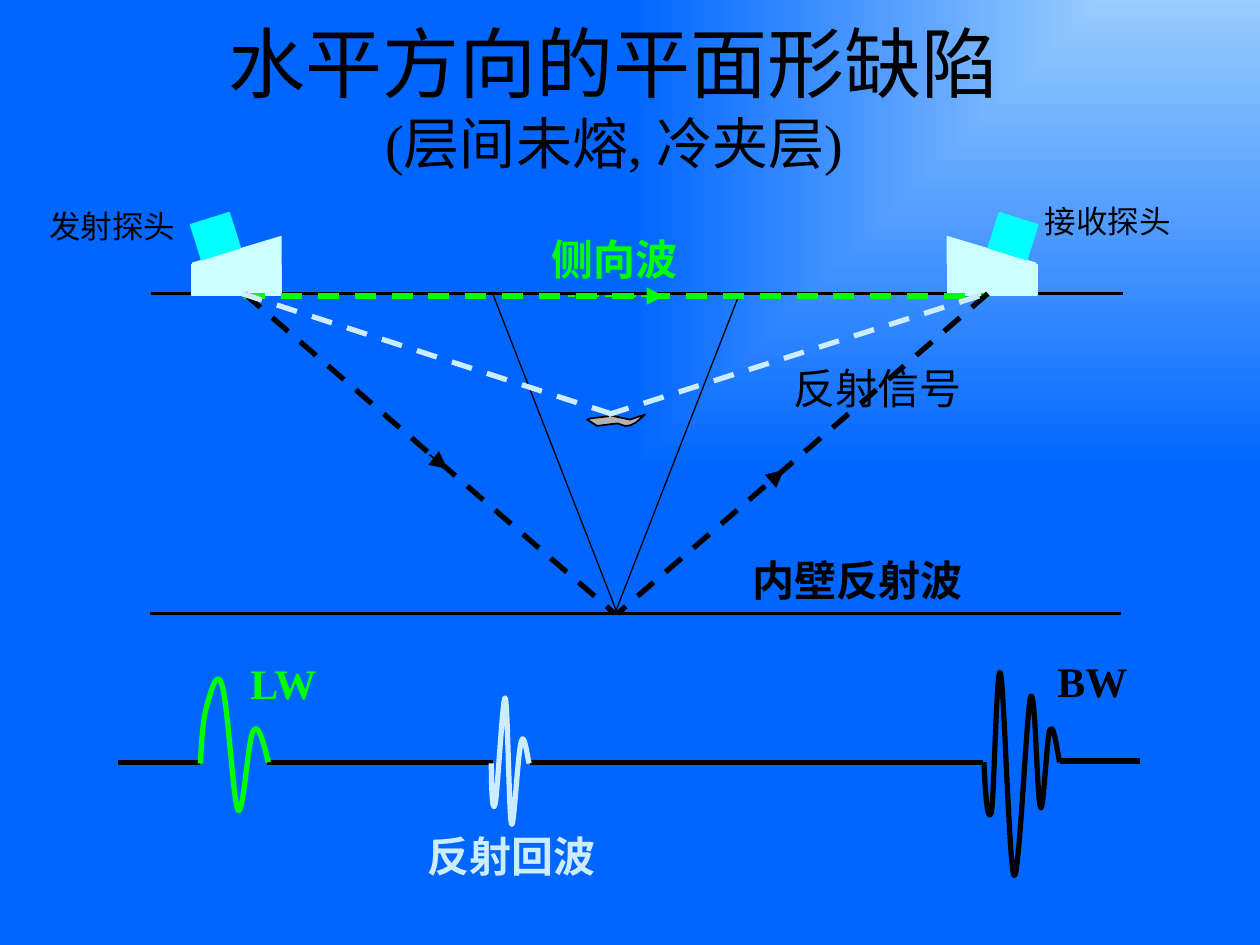
from lxml import etree
from pptx import Presentation
from pptx.dml.color import RGBColor
from pptx.enum.dml import MSO_LINE
from pptx.enum.shapes import MSO_CONNECTOR, MSO_SHAPE
from pptx.enum.text import MSO_ANCHOR, MSO_AUTO_SIZE, PP_ALIGN
from pptx.oxml.ns import qn
from pptx.util import Inches, Pt

STRAIGHT = MSO_CONNECTOR.STRAIGHT
DASH = MSO_LINE.DASH
RECTANGLE, RIGHT_TRIANGLE = MSO_SHAPE.RECTANGLE, MSO_SHAPE.RIGHT_TRIANGLE
MIDDLE, CENTER = MSO_ANCHOR.MIDDLE, PP_ALIGN.CENTER
NO_AUTOFIT, FIT_SHAPE = MSO_AUTO_SIZE.NONE, MSO_AUTO_SIZE.SHAPE_TO_FIT_TEXT

BLACK = RGBColor(0x00, 0x00, 0x00)
GREEN = RGBColor(0x00, 0xFF, 0x00)
CYAN = RGBColor(0x00, 0xFF, 0xFF)
PALE_CYAN = RGBColor(0xCC, 0xFF, 0xFF)
PALE_BLUE = RGBColor(0xCC, 0xEC, 0xFF)
GRAY = RGBColor(0xB2, 0xB2, 0xB2)
SKY = RGBColor(0x99, 0xCC, 0xFF)
BLUE = RGBColor(0x00, 0x66, 0xFF)
FONT = "Times New Roman"

LATERAL_PULSE = [(0, 0.01), (0.01, -0.16), (0.02, -0.34), (0.05, -0.44),
                 (0.08, -0.55), (0.13, -0.75), (0.17, -0.62),
                 (0.22, -0.48), (0.26, 0.32), (0.3, 0.38),
                 (0.34, 0.44), (0.38, -0.19), (0.42, -0.25),
                 (0.46, -0.32), (0.5, -0.16), (0.54, 0)]
FLAW_PULSE = [(0, 0.01), (0, 0.22), (0.01, 0.42), (0.03, 0.33),
              (0.05, 0.24), (0.09, -0.53), (0.11, -0.51),
              (0.13, -0.48), (0.14, 0.43), (0.16, 0.49),
              (0.18, 0.54), (0.21, -0.1), (0.24, -0.17),
              (0.26, -0.25), (0.29, -0.02), (0.3, 0.01)]
BACKWALL_PULSE = [(0, 0), (0.01, 0.25), (0.03, 0.51), (0.06, 0.39),
                  (0.08, 0.27), (0.1, -0.79), (0.13, -0.71),
                  (0.16, -0.63), (0.2, 0.87), (0.24, 0.9),
                  (0.28, 0.93), (0.34, -0.43), (0.37, -0.52),
                  (0.41, -0.61), (0.42, 0.32), (0.45, 0.36),
                  (0.47, 0.41), (0.5, -0.19), (0.52, -0.25),
                  (0.55, -0.32), (0.57, -0.16), (0.6, 0)]
FLAW_OUTLINE = [(0.03, 0.03), (0.2, 0.01), (0.34, 0.04), (0.46, 0),
                (0.39, 0.06), (0.37, 0.09), (0.3, 0.09),
                (0.24, 0.07), (0.08, 0.09), (0, 0.04)]


def paint_background(slide):
    fill = slide.background.fill
    fill.gradient()
    for stop, color in zip(fill.gradient_stops, (SKY, BLUE)):
        stop.color.rgb = color
    gradient = slide.background._cSld.find(".//" + qn("a:gradFill"))
    linear = gradient.find(qn("a:lin"))
    focus = etree.Element(qn("a:path"), {"path": "rect"})
    etree.SubElement(focus, qn("a:fillToRect"), {"l": "100000", "b": "100000"})
    gradient.replace(linear, focus)


def add_line(shapes, start, end, color, width, dashed=False, arrow=False):
    connector = shapes.add_connector(
        STRAIGHT, *(Inches(value) for value in (*start, *end)))
    line = connector.line
    line.color.rgb = color
    line.width = Pt(width)
    if dashed:
        line.dash_style = DASH
    if arrow:
        etree.SubElement(line._get_or_add_ln(), qn("a:tailEnd"),
                         {"type": "triangle", "w": "lg", "len": "lg"})
    etree.SubElement(connector._element.spPr, qn("a:effectLst"))


def add_label(shapes, box, text, color=BLACK, size=24, bold=False):
    shape = shapes.add_textbox(*(Inches(value) for value in box))
    frame = shape.text_frame
    frame.word_wrap = False
    frame.auto_size = FIT_SHAPE
    frame.vertical_anchor = MIDDLE
    paragraph = frame.paragraphs[0]
    paragraph.text = text
    paragraph.alignment = CENTER
    font = paragraph.font
    font.name, font.size, font.bold = FONT, Pt(size), bold
    font.color.rgb = color


def add_block(shapes, kind, box, color):
    shape = shapes.add_shape(kind, *(Inches(value) for value in box))
    shape.shadow.inherit = False
    shape.fill.solid()
    shape.fill.fore_color.rgb = color
    shape.line.color.rgb = color
    shape.line.width = Pt(1)
    return shape


def add_outline(shapes, left, top, points, curve_starts, color, width, closed=False):
    places = [(Inches(left + x), Inches(top + y)) for x, y in points]
    builder = shapes.build_freeform(*places[0])
    builder.add_line_segments(places[1:], close=closed)
    shape = builder.convert_to_shape()
    segments = list(shape._element.iter(qn("a:lnTo")))
    for start in curve_starts:
        curve = etree.Element(qn("a:cubicBezTo"))
        segments[start].addprevious(curve)
        for segment in segments[start:start + 3]:
            curve.append(segment[0])
            segment.getparent().remove(segment)
    shape.shadow.inherit = False
    shape.fill.background()
    shape.line.color.rgb = color
    shape.line.width = Pt(width)
    return shape


def add_pulse(shapes, left, baseline, points, color):
    add_outline(shapes, left, baseline, points, range(0, len(points) - 1, 3), color, 3)


def add_title(slide, box):
    title = slide.shapes.title
    title.left, title.top, title.width, title.height = (Inches(value) for value in box)
    frame = title.text_frame
    frame.auto_size = NO_AUTOFIT
    frame.vertical_anchor = MIDDLE
    paragraph = frame.paragraphs[0]
    paragraph.alignment = CENTER
    paragraph.font.name = FONT
    paragraph.font.color.rgb = BLACK
    heading = paragraph.add_run()
    heading.text = "水平方向的平面形缺陷"
    heading.font.size = Pt(44)
    paragraph.add_line_break()
    subtitle = paragraph.add_run()
    subtitle.text = "(层间未熔, 冷夹层)"
    subtitle.font.size = Pt(32)


def add_probe(slide, left, top, width, mirrored=False):
    def place(offset, down, part_width, height):
        x = width - offset - part_width if mirrored else offset
        return left + x, top + down, part_width, height

    shapes = slide.shapes.add_group_shape().shapes
    add_block(shapes, RECTANGLE, place(0, 0.37, width, 0.24), PALE_CYAN)
    wedge = add_block(shapes, RIGHT_TRIANGLE, place(0.01, 0.15, 0.7, 0.21), PALE_CYAN)
    if not mirrored:
        wedge._element.spPr.get_or_add_xfrm().set("flipH", "1")
    crystal = add_block(shapes, RECTANGLE, place(0.03, 0, 0.32, 0.29), CYAN)
    crystal.rotation = 17.4 if mirrored else -17.4


def add_specimen(slide, left, top, width, height):
    shapes, bottom = slide.shapes, top + height
    add_line(shapes, (left + 0.01, top), (left + width + 0.01, top), BLACK, 1.5)
    add_line(shapes, (left, bottom), (left + width, bottom), BLACK, 1.5)
    add_line(shapes, (left + 3.71, bottom), (left + 2.72, top), BLACK, 0.75)
    add_line(shapes, (left + 3.69, bottom), (left + 4.68, top), BLACK, 0.75)
    add_probe(slide, left + 0.33, top - 0.6, 0.71)
    add_probe(slide, left + 6.33, top - 0.6, 0.71, mirrored=True)
    add_label(shapes, (left - 0.9, top - 0.74, 1.2, 0.4), "发射探头", size=18)
    add_label(shapes, (left + 7, top - 0.78, 1.2, 0.4), "接收探头", size=18)


def add_signal_axis(slide, left, baseline):
    for start, end, rise in ((0.65, 0, 0), (1.18, 2.97, 0), (3.27, 6.86, 0), (7.47, 8.11, 0.01)):
        y = baseline - rise
        add_line(slide.shapes, (left + start, y), (left + end, y), BLACK, 3)


def add_lateral_wave(slide, left, top, width, baseline):
    shapes = slide.shapes.add_group_shape().shapes
    y = top + 0.02
    add_line(shapes, (left, y), (left + width, y), GREEN, 3, dashed=True)
    add_line(shapes, (left + 2.57, y), (left + 3.33, y), GREEN, 1, dashed=True, arrow=True)
    add_label(shapes, (left + 2.34, top - 0.53, 1.2, 0.5), "侧向波", GREEN, bold=True)
    add_pulse(shapes, left - 0.35, baseline, LATERAL_PULSE, GREEN)
    add_label(shapes, (left - 0.07, baseline - 0.88, 0.76, 0.5), "LW", GREEN, bold=True)


def add_backwall_wave(slide, left, top, width, height, baseline):
    shapes = slide.shapes.add_group_shape().shapes
    right, bottom = left + width, top + height
    add_line(shapes, (left + 1.47, top + 1.28), (left + 1.61, top + 1.39), BLACK, 1, arrow=True)
    add_line(shapes, (left + 4.21, top + 1.46), (left + 4.28, top + 1.4), BLACK, 1, arrow=True)
    add_line(shapes, (left, top), (left + 2.94, bottom), BLACK, 3, dashed=True)
    add_line(shapes, (right, top), (left + 2.96, bottom), BLACK, 3, dashed=True)
    add_label(shapes, (left + 3.92, top + 2.02, 1.89, 0.5), "内壁反射波", bold=True)
    add_pulse(shapes, left + 5.87, baseline, BACKWALL_PULSE, BLACK)
    add_label(shapes, (left + 6.35, baseline - 0.9, 0.76, 0.5), "BW", bold=True)


def add_flaw_wave(slide, left, top, width, baseline):
    flaw = add_outline(slide.shapes, left + 2.72, top + 0.96, FLAW_OUTLINE, [3],
                       BLACK, 1, closed=True)
    flaw.fill.solid()
    flaw.fill.fore_color.rgb = GRAY
    shapes = slide.shapes.add_group_shape().shapes
    add_line(shapes, (left - 0.02, top), (left + 2.99, top + 0.98), PALE_BLUE, 3, dashed=True)
    add_line(shapes, (left + 2.89, top + 0.96), (left + width - 0.01, top), PALE_BLUE, 3,
             dashed=True)
    add_pulse(shapes, left + 1.96, baseline, FLAW_PULSE, PALE_BLUE)
    add_label(shapes, (left + 1.35, baseline + 0.49, 1.54, 0.5), "反射回波", PALE_BLUE, bold=True)
    add_label(shapes, (left + 4.26, top + 0.5, 1.53, 0.5), "反射信号")


def main():
    presentation = Presentation()
    presentation.slide_width, presentation.slide_height = Inches(10), Inches(7.5)
    slide = presentation.slides.add_slide(presentation.slide_layouts[5])
    paint_background(slide)
    add_title(slide, (0, 0.25, 9.75, 1.02))
    add_specimen(slide, 1.19, 2.33, 7.71, 2.54)
    add_signal_axis(slide, 0.94, 6.05)
    add_lateral_wave(slide, 1.94, 2.33, 5.9, 6.05)
    add_backwall_wave(slide, 1.94, 2.33, 5.9, 2.54, 6.05)
    add_flaw_wave(slide, 1.94, 2.33, 5.9, 6.05)
    presentation.save("out.pptx")


if __name__ == "__main__":
    main()
